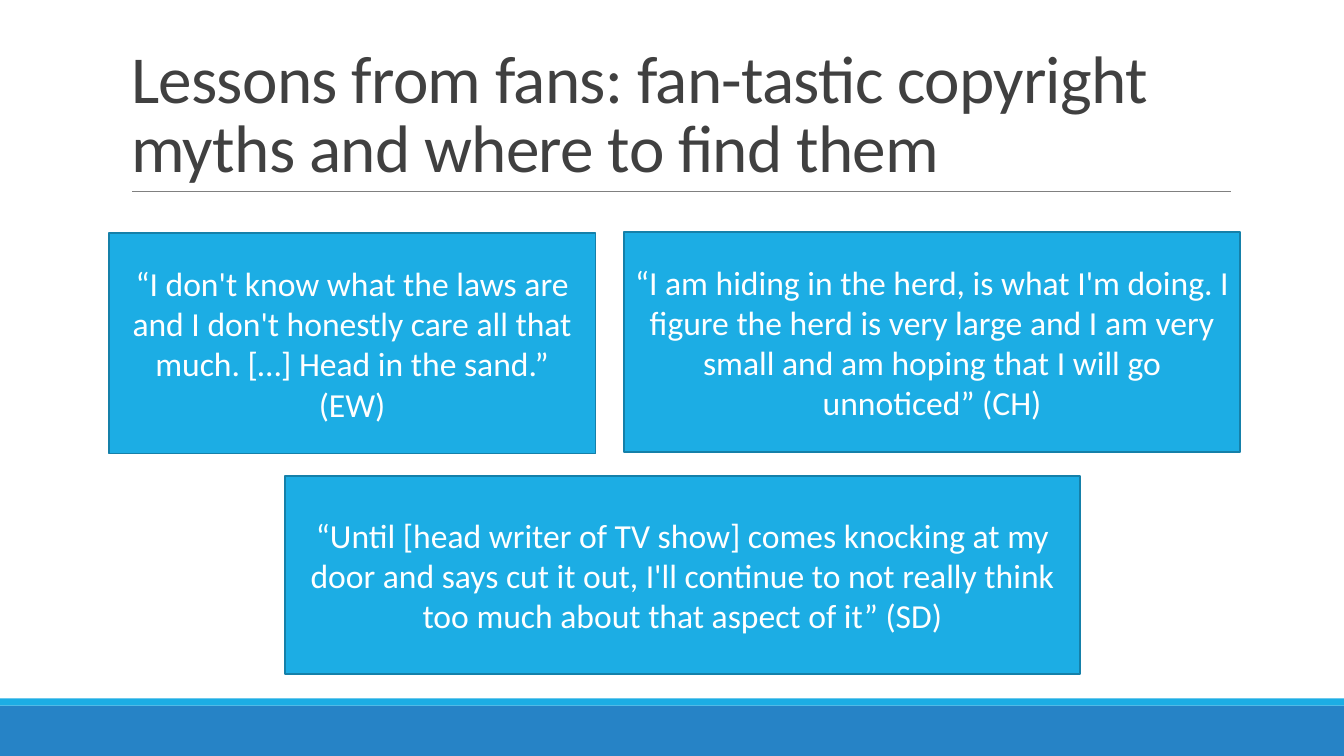
from dataclasses import dataclass

from lxml import etree
from pptx import Presentation
from pptx.dml.color import RGBColor
from pptx.enum import shapes, text
from pptx.oxml import ns
from pptx.shapes.autoshape import Shape
from pptx.slide import Slide
from pptx.util import Cm, Pt

DARK_BLUE = RGBColor(0x26, 0x83, 0xC6)
BRIGHT_BLUE = RGBColor(0x1C, 0xAD, 0xE4)
OUTLINE_BLUE = RGBColor(0x15, 0x80, 0xA9)
RULE_GREY = RGBColor(0x80, 0x80, 0x80)
TITLE_GREY = RGBColor(0x40, 0x40, 0x40)
WHITE = RGBColor(0xFF, 0xFF, 0xFF)
FONT = "Calibri"
SLIDE_WIDTH, SLIDE_HEIGHT = 33.87, 19.05


@dataclass(frozen=True)
class Box:
    """A rectangle's place in centimetres."""
    left: float
    top: float
    width: float
    height: float


@dataclass(frozen=True)
class Quote:
    box: Box
    wording: str


FOOTER_BANDS = [
    (Box(0, 17.78, SLIDE_WIDTH, 1.27), DARK_BLUE),
    (Box(0, 17.6, SLIDE_WIDTH, 0.18), BRIGHT_BLUE),
]

QUOTES = [
    Quote(Box(15.72, 5.84, 15.54, 5.56),
          "“I am hiding in the herd, is what I'm doing. I figure the herd is very "
          "large and I am very small and am hoping that I will go unnoticed” (CH)"),
    Quote(Box(7.19, 11.99, 20.02, 5),
          "“Until [head writer of TV show] comes knocking at my door and says cut it "
          "out, I'll continue to not really think too much about that aspect of it” (SD)"),
    Quote(Box(2.74, 5.87, 12.27, 5.56),
          "“I don't know what the laws are and I don't honestly care all that much. "
          "[…] Head in the sand.” (EW)"),
]


def add_rectangle(slide: Slide, box: Box, fill: RGBColor) -> Shape:
    rectangle = slide.shapes.add_shape(
        shapes.MSO_SHAPE.RECTANGLE,
        Cm(box.left), Cm(box.top), Cm(box.width), Cm(box.height))
    rectangle.shadow.inherit = False
    rectangle.fill.solid()
    rectangle.fill.fore_color.rgb = fill
    rectangle.line.fill.background()
    return rectangle


def add_title_rule(slide: Slide) -> None:
    rule = slide.shapes.add_connector(
        shapes.MSO_CONNECTOR.STRAIGHT, Cm(3.33), Cm(4.83), Cm(31.01), Cm(4.83))
    rule.line.color.rgb = RULE_GREY
    rule.line.width = Pt(0.5)
    etree.SubElement(rule._element.spPr, ns.qn("a:effectLst"))


def fill_title(slide: Slide, wording: str) -> None:
    title = slide.shapes.title
    title.left, title.top = Cm(3.05), Cm(0.79)
    title.width, title.height = Cm(27.94), Cm(4.03)
    frame = title.text_frame
    frame.text = wording
    frame.word_wrap = True
    frame.auto_size = text.MSO_AUTO_SIZE.NONE
    frame.vertical_anchor = text.MSO_ANCHOR.BOTTOM
    paragraph = frame.paragraphs[0]
    paragraph.alignment = text.PP_ALIGN.LEFT
    paragraph.line_spacing = 0.85
    run = paragraph.runs[0]
    run.font.name, run.font.size = FONT, Pt(48)
    run.font.color.rgb = TITLE_GREY
    run._r.get_or_add_rPr().set("spc", "-50")


def add_quote(slide: Slide, quote: Quote) -> None:
    panel = add_rectangle(slide, quote.box, BRIGHT_BLUE)
    panel.line.color.rgb = OUTLINE_BLUE
    panel.line.width = Pt(1.25)
    frame = panel.text_frame
    frame.text = quote.wording
    frame.word_wrap = True
    frame.vertical_anchor = text.MSO_ANCHOR.MIDDLE
    paragraph = frame.paragraphs[0]
    paragraph.alignment = text.PP_ALIGN.CENTER
    font = paragraph.runs[0].font
    font.name, font.size = FONT, Pt(24)
    font.color.rgb = WHITE


def main() -> None:
    deck = Presentation()
    deck.slide_width, deck.slide_height = Cm(SLIDE_WIDTH), Cm(SLIDE_HEIGHT)
    title_only = deck.slide_layouts[5]
    slide = deck.slides.add_slide(title_only)
    for box, colour in FOOTER_BANDS:
        add_rectangle(slide, box, colour)
    add_title_rule(slide)
    fill_title(slide, "Lessons from fans: fan-tastic copyright myths and where to find them")
    for quote in QUOTES:
        add_quote(slide, quote)
    deck.save("out.pptx")


if __name__ == "__main__":
    main()
